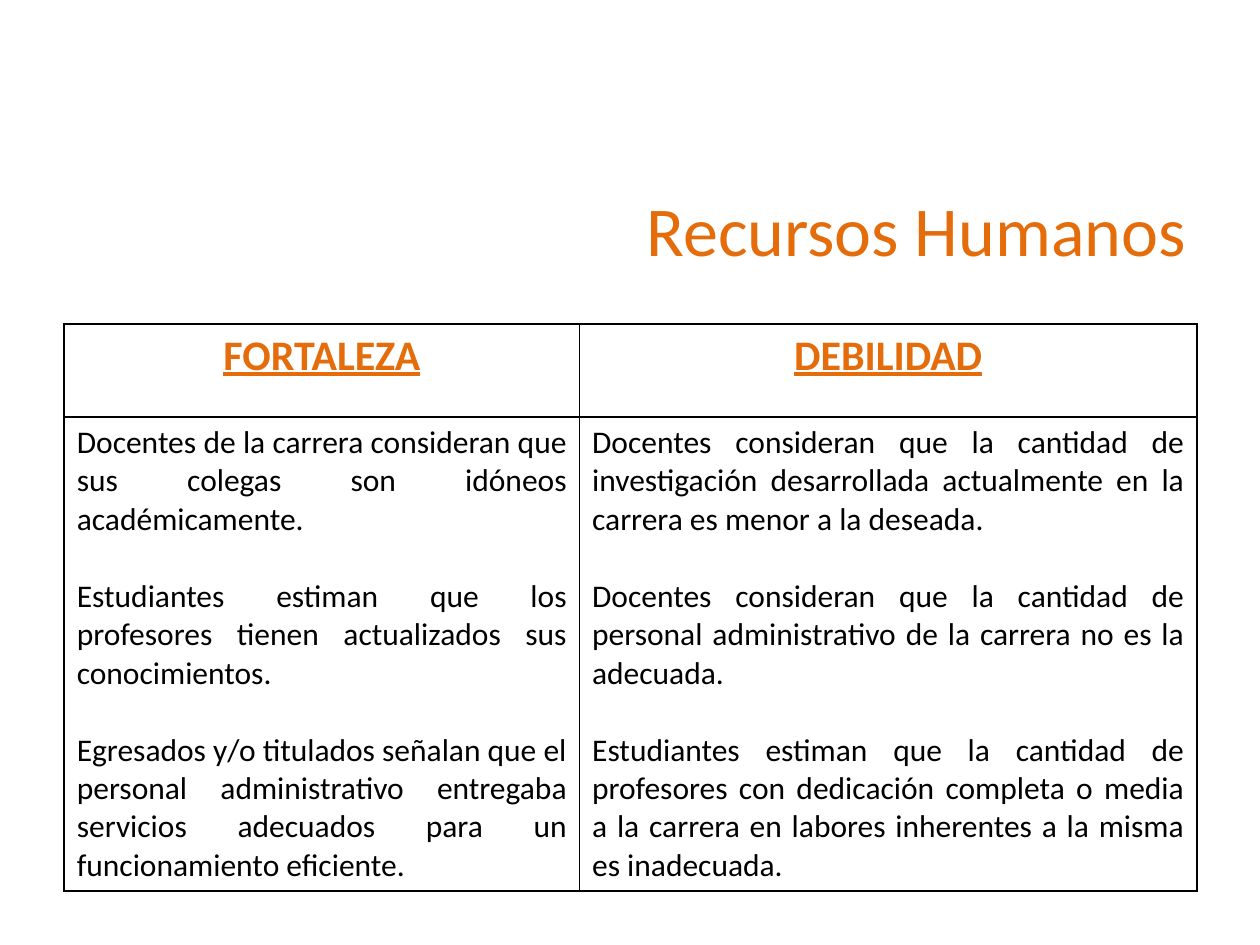
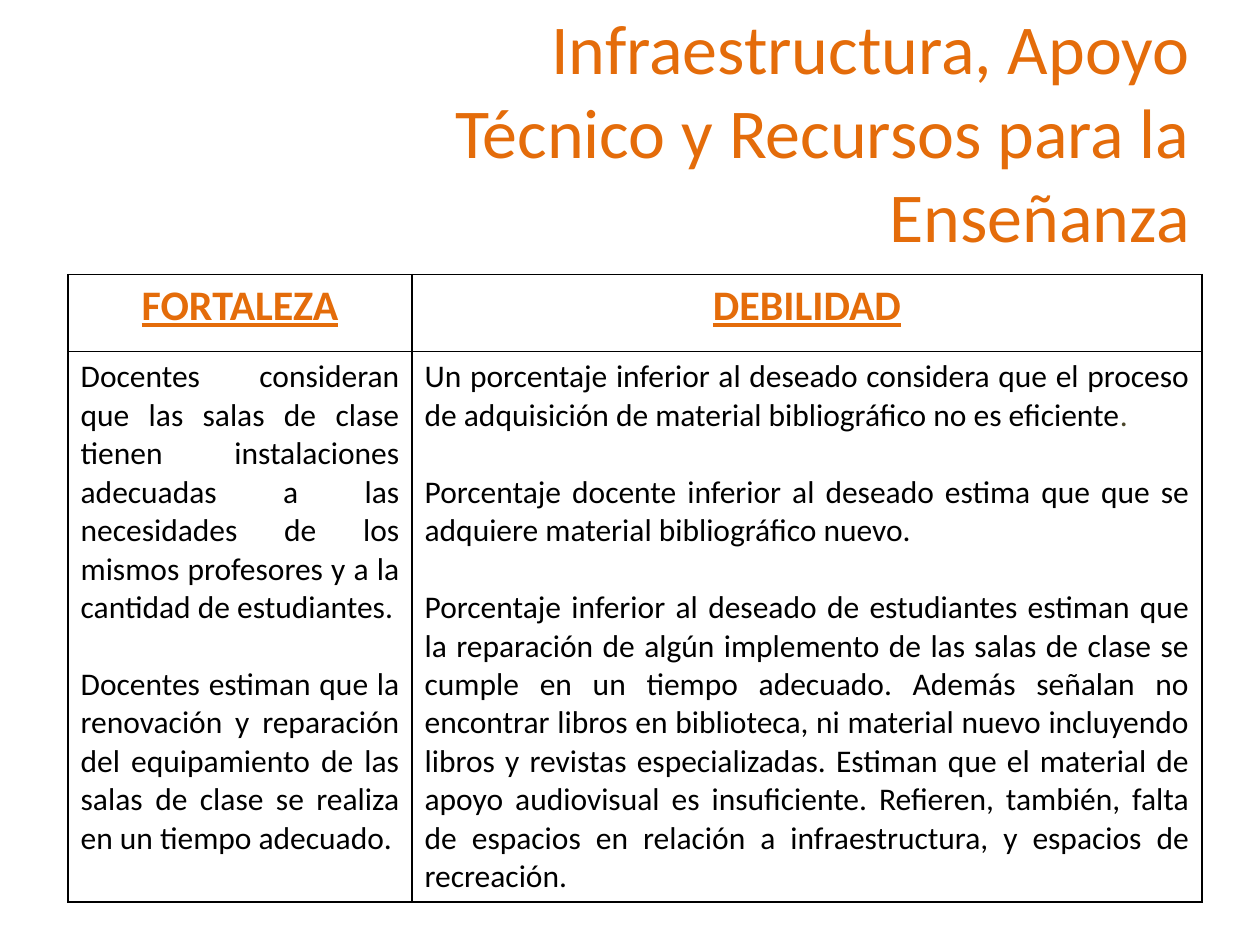
from pptx import Presentation
from pptx.dml.color import RGBColor as RGB
from pptx.enum.text import MSO_ANCHOR as ANCHOR, PP_ALIGN as ALIGN
from pptx.oxml import parse_xml
from pptx.oxml.ns import nsdecls
from pptx.util import Inches, Pt

COLORS = {"accent": "E46C0A", "text": "000000", "border": "000000", "stop": "4A452A"}
FONT = "Calibri"
HEADERS = ["FORTALEZA", "DEBILIDAD"]
SLIDES = [
    {
        "title": "Recursos Humanos",
        "title_at": (2.51, 1.46),
        "table_at": (0.51, 2.57),
        "cols": [4.09, 4.9],
        "rows": [0.74, 3.76],
        "body": [
            [
                "Docentes de la carrera consideran que sus colegas son idóneos académicamente. ",
                "Estudiantes estiman que los profesores tienen actualizados sus conocimientos.",
                "Egresados y/o titulados señalan que el personal administrativo entregaba "
                "servicios adecuados para un funcionamiento eficiente.",
            ],
            [
                "Docentes consideran que la cantidad de investigación desarrollada actualmente "
                "en la carrera es menor a la deseada.",
                "Docentes consideran que la cantidad de personal administrativo de la carrera "
                "no es la adecuada.",
                "Estudiantes estiman que la cantidad de profesores con dedicación completa o "
                "media a la carrera en labores inherentes a la misma es inadecuada.",
            ],
        ],
    },
    {
        "title": "Infraestructura, Apoyo Técnico y Recursos para la Enseñanza",
        "title_at": (2.54, 0.68),
        "table_at": (0.54, 2.18),
        "cols": [2.73, 6.27],
        "rows": [0.61, 4.37],
        "body": [
            [
                "Docentes consideran que las salas de clase tienen instalaciones adecuadas a "
                "las necesidades de los mismos profesores y a la cantidad de estudiantes.",
                "Docentes estiman que la renovación y reparación del equipamiento de las salas "
                "de clase se realiza en un tiempo adecuado. ",
            ],
            [
                "Un porcentaje inferior al deseado considera que el proceso de adquisición de "
                "material bibliográfico no es eficiente",
                "Porcentaje docente inferior al deseado estima que que se adquiere material "
                "bibliográfico nuevo.",
                "Porcentaje inferior al deseado de estudiantes estiman que la reparación de "
                "algún implemento de las salas de clase se cumple en un tiempo adecuado. "
                "Además señalan no encontrar libros en biblioteca, ni material nuevo incluyendo "
                "libros y revistas especializadas. Estiman que el material de apoyo audiovisual "
                "es insuficiente. Refieren, también, falta de espacios en relación a "
                "infraestructura, y espacios de recreación.",
            ],
        ],
    },
]


def style(p, size, color, align, strong=False):
    p.alignment = align
    for r in p.runs:
        f = r.font
        f.name, f.size, f.bold, f.underline = FONT, Pt(size), strong, strong
        f.color.rgb = RGB.from_string(COLORS[color])


def frame_cell(cell):
    tc_pr = cell._tc.get_or_add_tcPr()
    for side in ("lnL", "lnR", "lnT", "lnB"):
        tc_pr.append(parse_xml(
            f'<a:{side} {nsdecls("a")} w="12700"><a:solidFill>'
            f'<a:srgbClr val="{COLORS["border"]}"/></a:solidFill></a:{side}>'))
    cell.fill.background()


prs = Presentation()
prs.slide_width, prs.slide_height = Inches(10), Inches(7.5)

for data in SLIDES:
    s = prs.slides.add_slide(prs.slide_layouts[6])

    left, top = data["title_at"]
    tf = s.shapes.add_textbox(Inches(left), Inches(top), Inches(7), Inches(0.71)).text_frame
    tf.word_wrap = True
    tf.vertical_anchor = ANCHOR.MIDDLE
    tf.text = data["title"]
    style(tf.paragraphs[0], 40, "accent", ALIGN.RIGHT)

    left, top = data["table_at"]
    tbl = s.shapes.add_table(2, 2, Inches(left), Inches(top), Inches(sum(data["cols"])),
                             Inches(sum(data["rows"]))).table
    tbl.first_row = tbl.horz_banding = False
    for row, height in zip(tbl.rows, data["rows"]):
        row.height = Inches(height)

    for i, (header, texts) in enumerate(zip(HEADERS, data["body"])):
        tbl.columns[i].width = Inches(data["cols"][i])
        head, body = tbl.cell(0, i), tbl.cell(1, i)
        frame_cell(head)
        frame_cell(body)
        head.text_frame.text = header
        style(head.text_frame.paragraphs[0], 24, "accent", ALIGN.CENTER, strong=True)
        body.text_frame.text = "\n".join(texts)
        for n, p in enumerate(body.text_frame.paragraphs):
            style(p, 18, "text", ALIGN.JUSTIFY)
            if n:
                p.space_before = Pt(22)

p = tbl.cell(1, 1).text_frame.paragraphs[0]
r = p.add_run()
r.text = "."
style(p, 18, "text", ALIGN.JUSTIFY)
r.font.color.rgb = RGB.from_string(COLORS["stop"])

prs.save("out.pptx")
